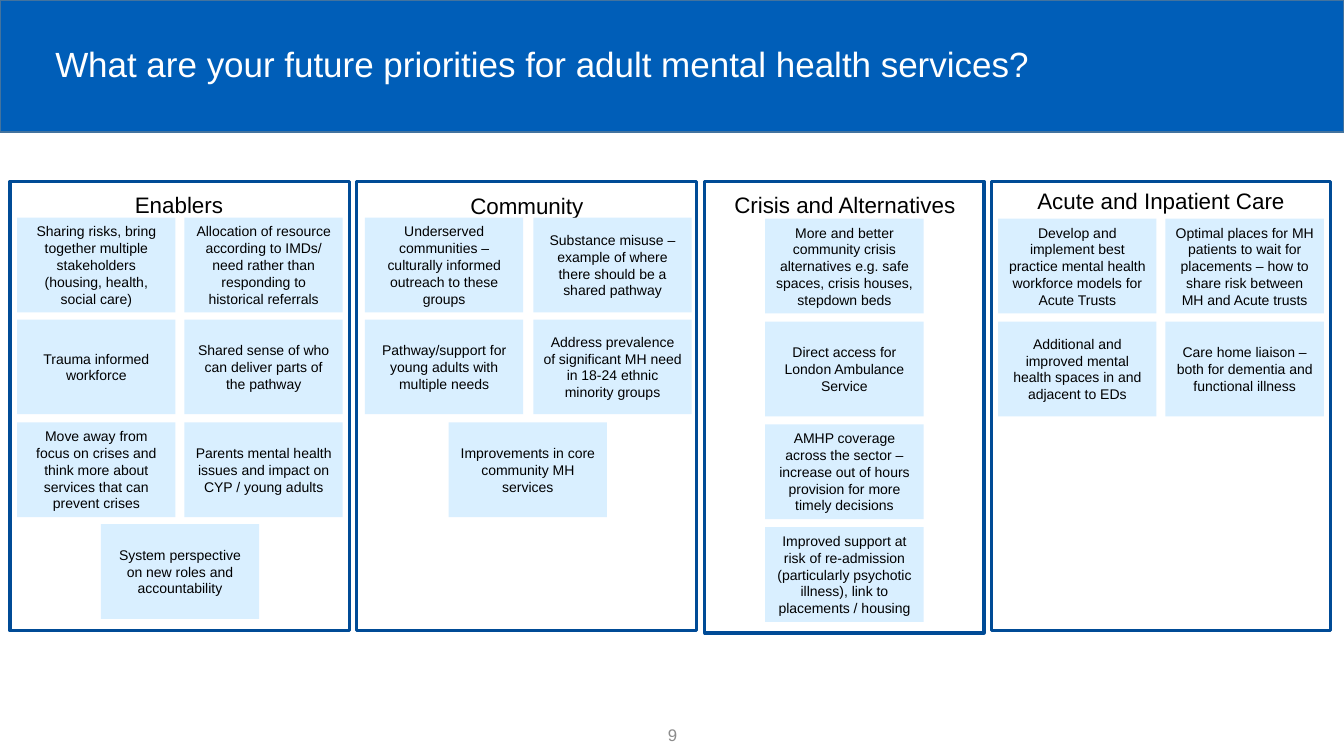
from pptx import Presentation
from pptx.dml.color import RGBColor
from pptx.enum.shapes import MSO_SHAPE
from pptx.enum.text import MSO_ANCHOR, PP_ALIGN
from pptx.util import Pt

PX = 9144
COLORS = {
    "banner": "005EB8", "banner_edge": "43739E", "frame": "004B96",
    "card": "D9EFFF", "ink": "000000", "white": "FFFFFF", "grey": "8C8C8C",
}
CARD_W, CARD_H = 157, 94

priorities = [
    dict(heading="Enablers", heading_box=(68, 184, 219, 37), frame=(10, 180, 337, 446),
         left=17, right=183, top=216, pitch=(203, 2), rows=[
        ["Sharing risks, bring together multiple stakeholders (housing, health, social care)",
         "Allocation of resource according to IMDs/ need rather than responding to historical referrals"],
        ["Trauma informed workforce",
         "Shared sense of who can deliver parts of the pathway"],
        ["Move away from focus on crises and think more about services that can prevent crises",
         "Parents mental health issues and impact on CYP / young adults"],
        ["System perspective on new roles and accountability"],
    ]),
    dict(heading="Community", heading_box=(413, 185, 219, 37), frame=(354, 180, 337, 446),
         left=362, right=529, top=216, pitch=(203, 2), rows=[
        ["Underserved communities – culturally informed outreach to these groups",
         "Substance misuse – example of where there should be a shared pathway"],
        ["Pathway/support for young adults with multiple needs",
         "Address prevalence of significant MH need in 18-24 ethnic minority groups"],
        ["Improvements in core community MH services"],
    ]),
    dict(heading="Crisis and Alternatives", heading_box=(708, 184, 260, 37), frame=(699, 180, 277, 448),
         left=759, right=760, top=217, pitch=(102, 1), rows=[
        ["More and better community crisis alternatives e.g. safe spaces, crisis houses, stepdown beds"],
        ["Direct access for London Ambulance Service"],
        ["AMHP coverage across the sector – increase out of hours provision for more timely decisions"],
        ["Improved support at risk of re-admission (particularly psychotic illness), link to placements / housing"],
    ]),
    dict(heading="Acute and Inpatient Care", heading_box=(1013, 180, 277, 37), frame=(983, 180, 337, 446),
         left=990, right=1156, top=217, pitch=(102, 1), rows=[
        ["Develop and implement best practice mental health workforce models for Acute Trusts",
         "Optimal places for MH patients to wait for placements – how to share risk between MH and Acute trusts"],
        ["Additional and improved mental health spaces in and adjacent to EDs",
         "Care home liaison – both for dementia and functional illness"],
    ]),
]

deck = Presentation()
deck.slide_width, deck.slide_height = 1333 * PX, 750 * PX
slide = deck.slides.add_slide(deck.slide_layouts[6])


def add_box(box, fill=None, line=None, weight=1):
    rect = slide.shapes.add_shape(MSO_SHAPE.RECTANGLE, *(v * PX for v in box))
    rect.shadow.inherit = False
    if fill:
        rect.fill.solid()
        rect.fill.fore_color.rgb = RGBColor.from_string(COLORS[fill])
    else:
        rect.fill.background()
    if line:
        rect.line.color.rgb = RGBColor.from_string(COLORS[line])
        rect.line.width = Pt(weight)
    else:
        rect.line.fill.background()
    return rect


def write(text, box=None, holder=None, size=10, color="ink", align=PP_ALIGN.CENTER, spacing=None):
    holder = holder or slide.shapes.add_textbox(*(v * PX for v in box))
    frame = holder.text_frame
    frame.word_wrap = True
    frame.vertical_anchor = MSO_ANCHOR.MIDDLE
    paragraph = frame.paragraphs[0]
    paragraph.text = text
    paragraph.alignment = align
    paragraph.line_spacing = spacing
    paragraph.font.name = "Arial"
    paragraph.font.size = Pt(size)
    paragraph.font.color.rgb = RGBColor.from_string(COLORS[color])


add_box((0, 0, 1333, 131), fill="banner", line="banner_edge")
write("What are your future priorities for adult mental health services?", box=(45, 36, 1244, 59),
      size=25, color="white", align=PP_ALIGN.LEFT, spacing=0.9)

for area in priorities:
    add_box(area["frame"], line="frame", weight=2.25)
    write(area["heading"], box=area["heading_box"], size=16)
    step, rows_per_step = area["pitch"]
    for row, cards in enumerate(area["rows"]):
        top = area["top"] + row * step // rows_per_step
        middle = (area["left"] + area["right"]) // 2
        lefts = [area["left"], area["right"]] if len(cards) == 2 else [middle]
        for left, priority in zip(lefts, cards):
            write(priority, holder=add_box((left, top, CARD_W, CARD_H), fill="card"))

write("9", box=(517, 709, 300, 40), size=12, color="grey")

deck.save("out.pptx")
